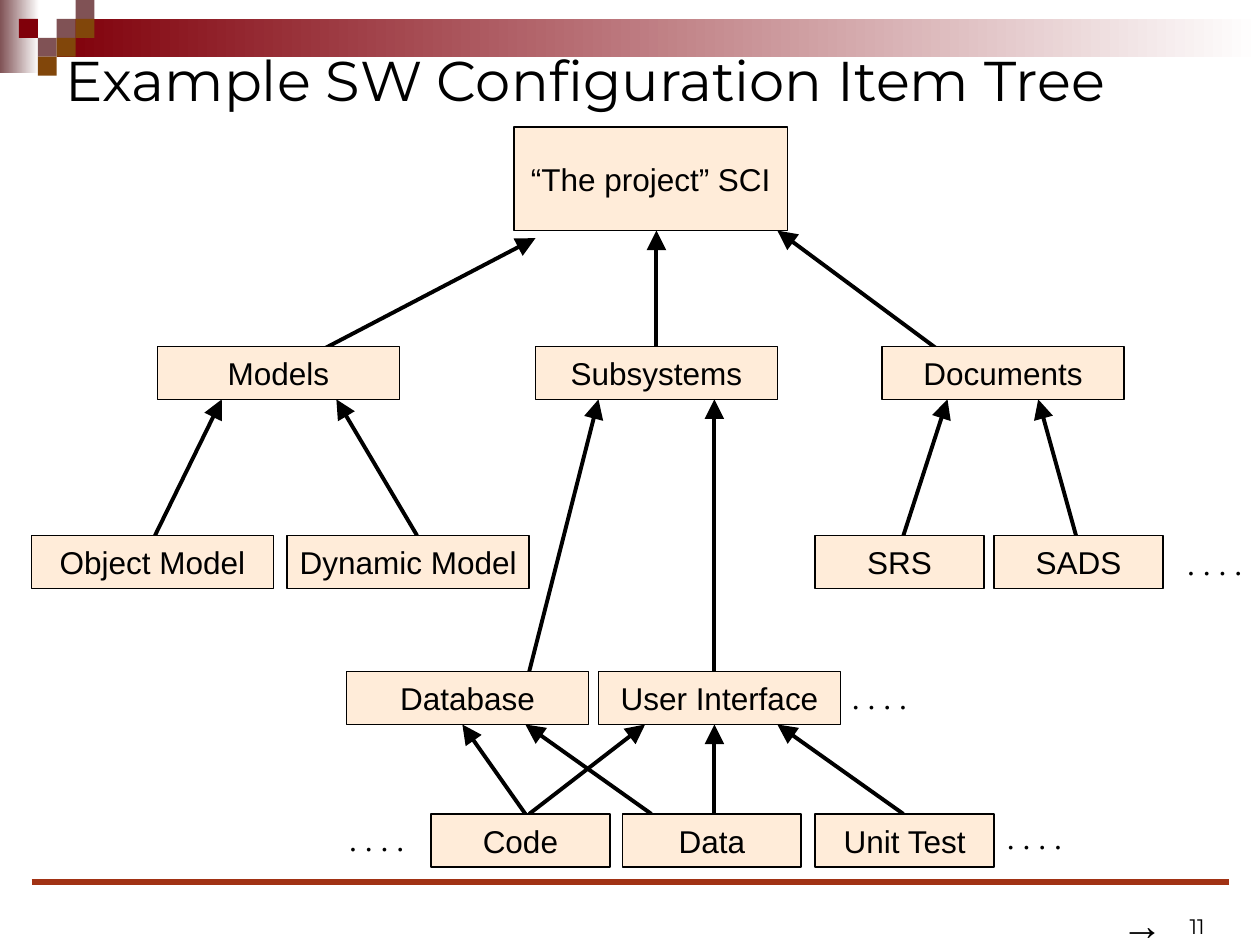
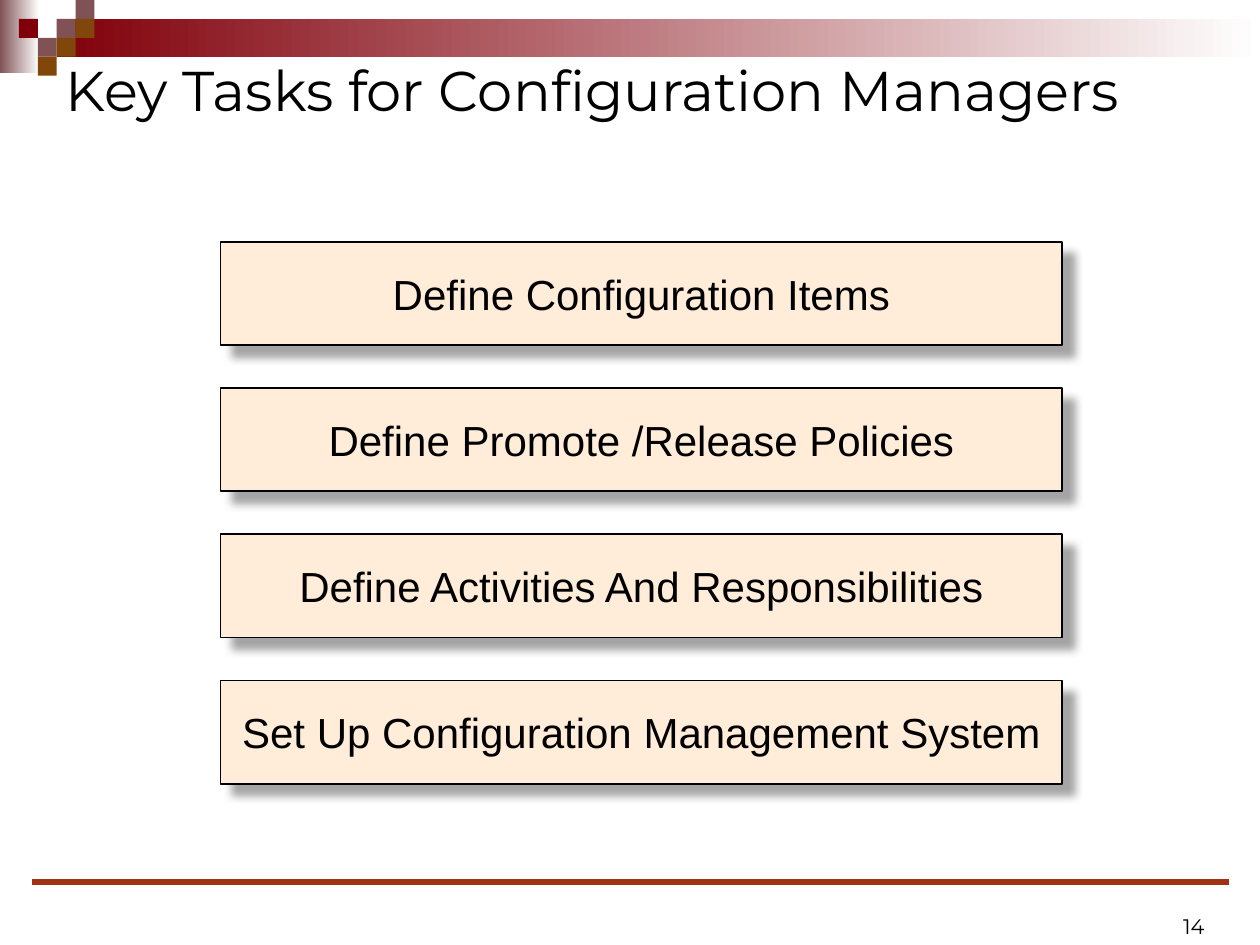
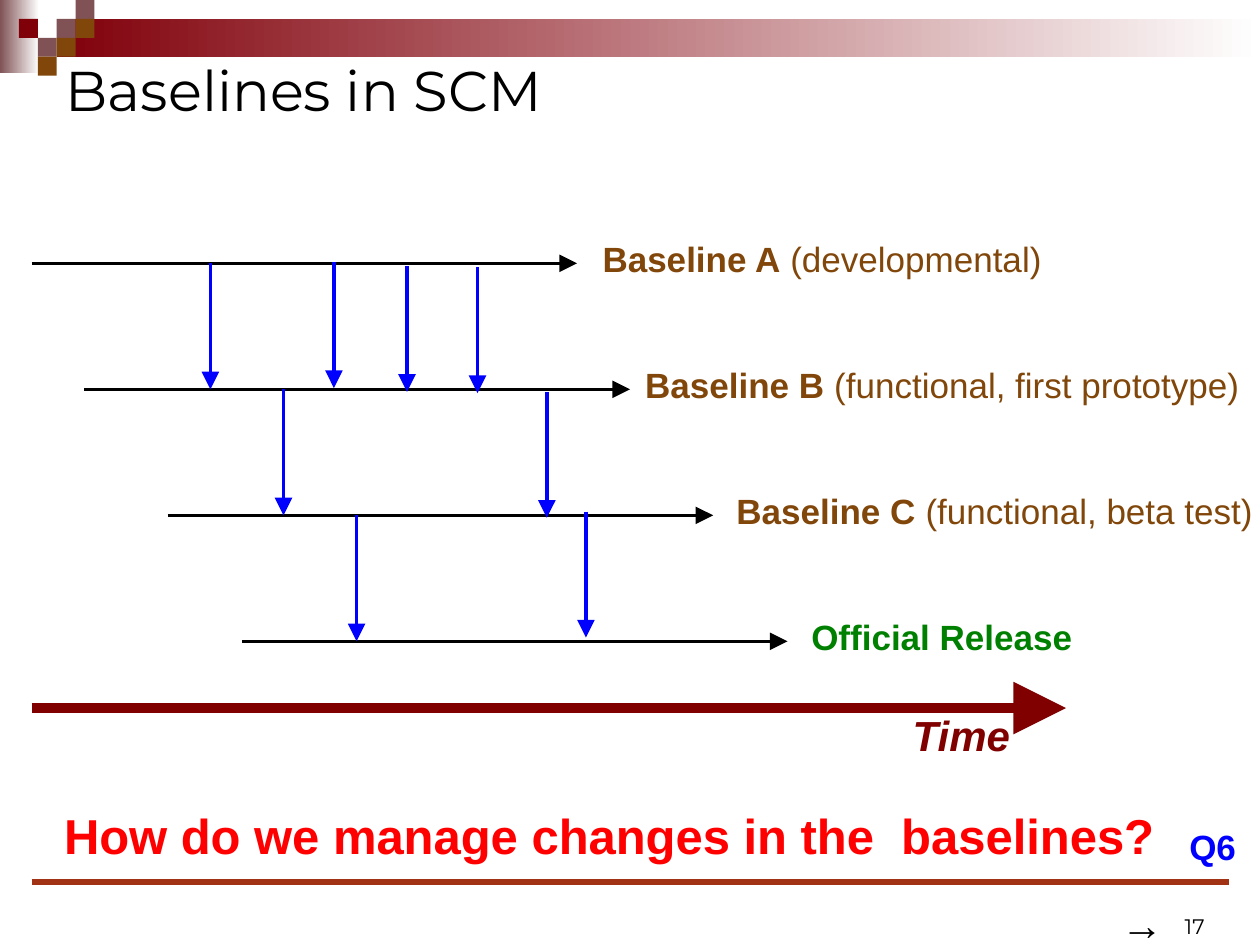
from lxml.etree import SubElement
from pptx import Presentation
from pptx.dml.color import RGBColor
from pptx.enum.shapes import MSO_CONNECTOR, MSO_SHAPE
from pptx.enum.text import MSO_ANCHOR, MSO_AUTO_SIZE, PP_ALIGN
from pptx.oxml.ns import qn
from pptx.util import Inches, Pt

BLACK = RGBColor(0x00, 0x00, 0x00)
WHITE = RGBColor(0xFF, 0xFF, 0xFF)
CREAM = RGBColor(0xFF, 0xEC, 0xD9)
GREY = RGBColor(0x86, 0x86, 0x86)
MAUVE = RGBColor(0x80, 0x52, 0x55)
CRIMSON = RGBColor(0x80, 0x00, 0x0A)
BROWN = RGBColor(0x81, 0x46, 0x0A)
RUST = RGBColor(0xA1, 0x32, 0x14)
MAROON = RGBColor(0x80, 0x00, 0x00)
BLUE = RGBColor(0x00, 0x00, 0xFF)
GREEN = RGBColor(0x00, 0x80, 0x00)
RED = RGBColor(0xFF, 0x00, 0x00)

# Shared frame: mosaic tiles as (column, row, colour)
TILE = 0.15
TILES = [(3, 1, MAUVE), (4, 0, MAUVE), (4, 1, BROWN), (2, 2, MAUVE),
         (1, 1, CRIMSON), (3, 2, BROWN), (2, 3, BROWN)]
FADES = [((0, 0, 0.31, 0.58), MAUVE), ((0.45, 0.15, 9.55, 0.3), CRIMSON)]

# Item tree: each level has a top, a height and boxes of (text, left, width)
TREE = {
    "project": (1.01, 0.82, [("“The project” SCI", 4.08, 2.17)]),
    "groups": (2.75, 0.42, [("Models", 1.25, 1.92), ("Subsystems", 4.25, 1.92),
                            ("Documents", 7, 1.92)]),
    "items": (4.25, 0.42, [("Object Model", 0.25, 1.92), ("Dynamic Model", 2.28, 1.92),
                           ("SRS", 6.47, 1.34), ("SADS", 7.89, 1.34)]),
    "subsystems": (5.33, 0.42, [("Database", 2.75, 1.92), ("User Interface", 4.75, 1.92)]),
    "parts": (6.46, 0.42, [("Code", 3.42, 1.42), ("Data", 4.94, 1.42),
                           ("Unit Test", 6.47, 1.42)]),
}
# Child level, parent level, (child x, parent x) pairs,
# start below the child's top, gap below the parent
LINKS = [
    ("groups", "project", [(2.28, 4.25)], 0.17, 0.06),
    ("groups", "project", [(5.21, 5.21), (7.52, 6.17)], 0.08, 0),
    ("items", "groups", [(1.23, 1.76), (3.31, 2.67), (7.17, 7.52), (8.54, 8.24)], 0, 0),
    ("subsystems", "groups", [(4.2, 4.75), (5.67, 5.67)], 0, 0),
    ("parts", "subsystems", [(4.2, 5.12), (5.67, 5.67), (7.17, 6.17),
                             (4.17, 3.67), (5.17, 4.17)], 0, 0),
]
MORE_ITEMS = [(9.32, 4.27), (2.67, 6.46), (7.89, 6.44), (6.66, 5.33)]

TASKS = ["Define Configuration Items", "Define Promote /Release Policies",
         "Define Activities And Responsibilities", "Set Up Configuration Management System"]

# Baselines: line start, label (bold part, plain part), label left and width, colour
BASELINES = [
    (0.25, "Baseline A", " (developmental)", 4.67, 3.71, BROWN),
    (0.67, "Baseline B", " (functional, first prototype)", 5, 4.96, BROWN),
    (1.33, "Baseline C ", "(functional, beta test)", 5.73, 4.33, BROWN),
    (1.92, "Official Release", "", 6.33, 2.29, GREEN),
]
# Promotions leaving each baseline: (x, shift down)
PROMOTIONS = [
    [(1.67, 0), (2.65, -0.01), (3.23, 0.02), (3.79, 0.03)],
    [(2.25, 0), (4.34, 0.02)],
    [(2.83, 0), (4.65, -0.03)],
]


def write(shape, runs, size, color=BLACK, font="Arial", align=PP_ALIGN.CENTER,
          anchor=MSO_ANCHOR.MIDDLE, wrap=False, italic=False):
    """Fill a shape with one paragraph of (text, bold) runs."""
    frame = shape.text_frame
    layout = {"auto_size": MSO_AUTO_SIZE.NONE, "word_wrap": wrap, "vertical_anchor": anchor}
    for key, value in layout.items():
        setattr(frame, key, value)
    paragraph = frame.paragraphs[0]
    paragraph.alignment = align
    for text, bold in runs:
        run = paragraph.add_run()
        run.text = text
        look = {"name": font, "size": Pt(size), "bold": bold, "italic": italic}
        for key, value in look.items():
            setattr(run.font, key, value)
        run.font.color.rgb = color


def add_label(slide, at, runs, size, **look):
    write(slide.shapes.add_textbox(*map(Inches, at)), runs, size, **look)


def add_rect(slide, at, color):
    rect = slide.shapes.add_shape(MSO_SHAPE.RECTANGLE, *map(Inches, at))
    rect.shadow.inherit = False
    rect.fill.solid()
    rect.fill.fore_color.rgb = color
    rect.line.fill.background()
    return rect


def add_box(slide, at, text, size):
    box = add_rect(slide, at, CREAM)
    box.line.color.rgb = BLACK
    box.line.width = Pt(1)
    write(box, [(text, False)], size)
    return box


def add_line(slide, start, end, color, width, arrow=True):
    line = slide.shapes.add_connector(MSO_CONNECTOR.STRAIGHT, *map(Inches, start + end))
    line.line.color.rgb = color
    line.line.width = Pt(width)
    properties = line.element.spPr
    if arrow:
        SubElement(properties.find(qn("a:ln")), qn("a:tailEnd"),
                   type="triangle", w="lg", len="lg")
    SubElement(properties, qn("a:effectLst"))


def drop_shadow(box):
    effects = box.element.spPr.find(qn("a:effectLst"))
    outer = SubElement(effects, qn("a:outerShdw"), blurRad=str(Pt(5)), dist=str(Pt(8.5)),
                       dir="2700000", algn="ctr", rotWithShape="0")
    tint = SubElement(outer, qn("a:srgbClr"), val=str(GREY))
    SubElement(tint, qn("a:alpha"), val="75000")


def build_frame(slide, layout):
    """Draw the band, mosaic and footer rule, then move them to the layout."""
    before = len(slide.shapes)
    for at, color in FADES:
        fade = add_rect(slide, at, color).fill
        fade.gradient()
        fade.gradient_angle = 0
        for stop, tint in zip(fade.gradient_stops, (color, WHITE)):
            stop.color.rgb = tint
    for column, row, color in TILES:
        add_rect(slide, (column * TILE, row * TILE, TILE, TILE), color)
    add_line(slide, (0.25, 7), (9.75, 7), RUST, 3, arrow=False)
    for number, part in enumerate(list(slide.shapes)[before:], 100):
        part.element.xpath(".//p:cNvPr")[0].set("id", str(number))
        layout.shapes.element.append(part.element)


def start_slide(deck, layout, title, number, top=0.33, width=9.58, forward=False):
    slide = deck.slides.add_slide(layout)
    heading = slide.shapes.title
    place = {"left": 0.42, "top": top, "width": width, "height": 0.75}
    for key, value in place.items():
        setattr(heading, key, Inches(value))
    write(heading, [(title, False)], 32, font="Montserrat", align=PP_ALIGN.LEFT, wrap=True)
    add_label(slide, (7.33, 7, 2.33, 0.5), [(str(number), False)], 12, font="Montserrat",
              align=PP_ALIGN.RIGHT, anchor=MSO_ANCHOR.BOTTOM, wrap=True)
    if forward:
        add_label(slide, (8.8, 7.08, 0.53, 0.5), [("→", False)], 24,
                  align=PP_ALIGN.LEFT, anchor=MSO_ANCHOR.TOP)
    return slide


def draw_tree(slide):
    for child, parent, pairs, sink, gap in LINKS:
        child_y = TREE[child][0] + sink
        parent_y = sum(TREE[parent][:2]) + gap
        for child_x, parent_x in pairs:
            add_line(slide, (child_x, child_y), (parent_x, parent_y), BLACK, 2.25)
    for top, height, boxes in TREE.values():
        for text, left, width in boxes:
            add_box(slide, (left, top, width, height), text, 18)
    for left, top in MORE_ITEMS:
        add_label(slide, (left, top, 0.64, 0.4), [(". . . .", False)], 18,
                  font="Times New Roman")


def draw_tasks(slide):
    for row, task in enumerate(TASKS):
        drop_shadow(add_box(slide, (1.75, 1.92 + 1.16 * row, 6.68, 0.82), task, 24))


def draw_baselines(slide):
    first, step, length = 2.09, 1, 4.33
    for row, (start, name, note, left, width, color) in enumerate(BASELINES):
        y = first + row * step
        add_line(slide, (start, y), (start + length, y), BLACK, 2)
        runs = [(name, True)] + ([(note, False)] if note else [])
        add_label(slide, (left, y - 0.26, width, 0.44), runs, 20, color=color)
    for row, promotions in enumerate(PROMOTIONS):
        for x, shift in promotions:
            y = first + row * step + shift
            add_line(slide, (x, y), (x, y + step), BLUE, 2)
    # Time axis and closing question
    add_line(slide, (0.25, 5.62), (8.46, 5.62), MAROON, 6)
    add_label(slide, (7.1, 5.58, 1.06, 0.5), [("Time", True)], 24, color=MAROON, italic=True)
    add_label(slide, (0.25, 6.34, 9.17, 0.57),
              [("How do we manage changes in the  baselines?", True)], 28, color=RED, wrap=True)
    add_label(slide, (9.34, 6.5, 0.58, 0.44), [("Q6", True)], 20, color=BLUE,
              align=PP_ALIGN.LEFT, anchor=MSO_ANCHOR.TOP)


def main():
    deck = Presentation()
    deck.slide_width, deck.slide_height = Inches(10), Inches(7.5)
    layout = deck.slide_layouts.get_by_name("Title Only")

    tree = start_slide(deck, layout, "Example SW Configuration Item Tree", 11,
                       top=0.25, forward=True)
    build_frame(tree, layout)
    draw_tree(tree)
    tasks = start_slide(deck, layout, "Key Tasks for Configuration Managers", 14)
    draw_tasks(tasks)
    baselines = start_slide(deck, layout, "Baselines in SCM", 17, width=9, forward=True)
    draw_baselines(baselines)
    deck.save("out.pptx")


if __name__ == "__main__":
    main()
